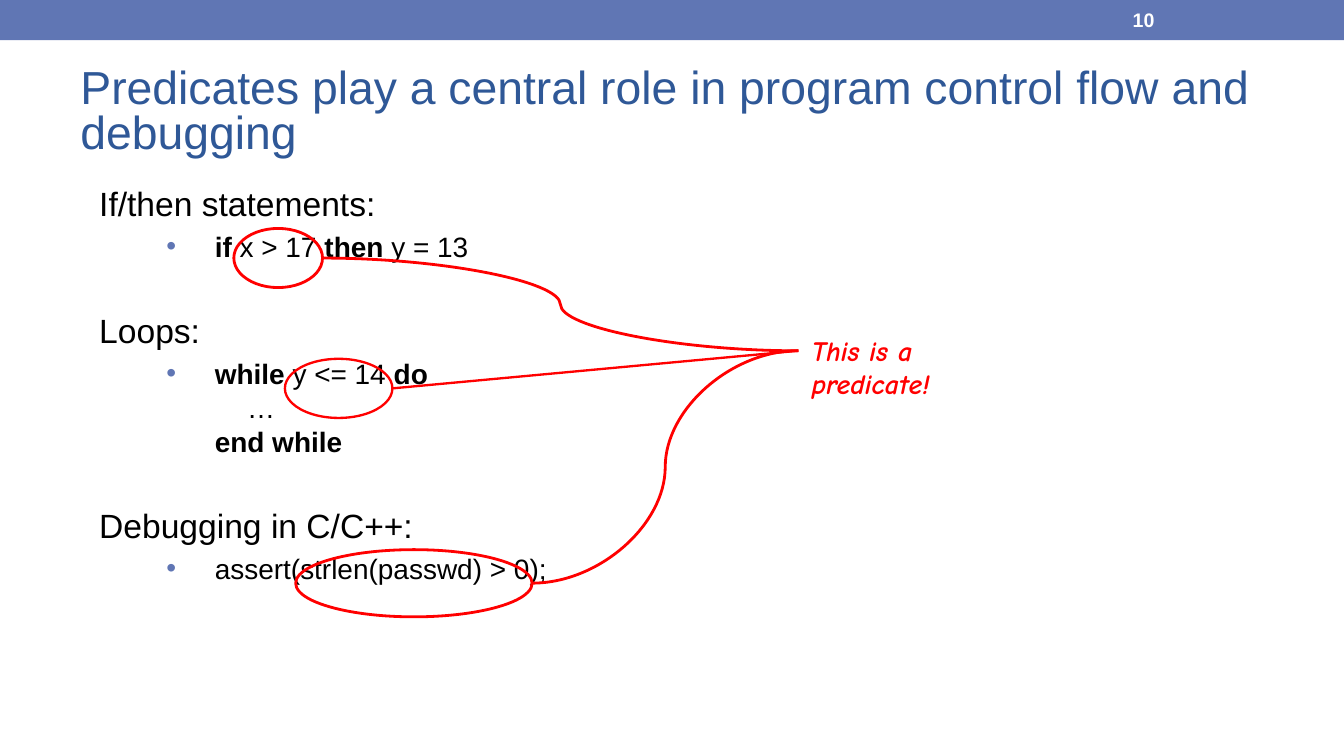
from lxml import etree
from pptx import Presentation
from pptx.dml.color import RGBColor
from pptx.enum.shapes import MSO_CONNECTOR, MSO_SHAPE
from pptx.enum.text import MSO_ANCHOR
from pptx.oxml.ns import qn
from pptx.util import Inches, Pt

RECT, OVAL = MSO_SHAPE.RECTANGLE, MSO_SHAPE.OVAL
CURVE, STRAIGHT = MSO_CONNECTOR.CURVE, MSO_CONNECTOR.STRAIGHT
TOP, MIDDLE = MSO_ANCHOR.TOP, MSO_ANCHOR.MIDDLE
BLUE = RGBColor(0x60, 0x76, 0xB4)
NAVY = RGBColor(0x2F, 0x58, 0x97)
RED = RGBColor(0xFF, 0x00, 0x00)
BLACK = RGBColor(0x00, 0x00, 0x00)
WHITE = RGBColor(0xFF, 0xFF, 0xFF)

prs = Presentation()
prs.slide_width = Inches(10)
prs.slide_height = Inches(10) * 9 // 16
s = prs.slides.add_slide(prs.slide_layouts[6])


def add_box(x, y, w, h, anchor=TOP):
    tf = s.shapes.add_textbox(Inches(x), Inches(y), Inches(w), Inches(h)).text_frame
    tf.word_wrap = True
    tf.vertical_anchor = anchor
    return tf


def add_run(p, text, size, color, bold=False, font="Arial"):
    r = p.add_run()
    r.text = text
    r.font.name = font
    r.font.size = Pt(size)
    r.font.bold = bold
    r.font.color.rgb = color
    return r


banner = s.shapes.add_shape(RECT, 0, 0, Inches(10), Inches(0.3))
banner.shadow.inherit = False
banner.fill.solid()
banner.fill.fore_color.rgb = BLUE
banner.line.fill.background()

HEADING, BULLET, CODE, NESTED = "heading", "bullet", "code", "nested"
MARGINS = {HEADING: 0.5, BULLET: 1, CODE: 1, NESTED: 1.24}
body = [
    (HEADING, 3.6, [("If/then statements:", False)]),
    (BULLET, 3.6, [("if", True), (" x > 17 ", False), ("then", True), (" y = 13", False)]),
    (HEADING, 24.8, [("Loops:", False)]),
    (BULLET, 3.6, [("while", True), (" y <= 14 ", False), ("do", True)]),
    (NESTED, 0.2, [("…", False)]),
    (CODE, 0.2, [("end while", True)]),
    (HEADING, 24.8, [("Debugging in C/C++:", False)]),
    (BULLET, 3.6, [("assert(strlen(passwd) > 0);", False)]),
]
tf = add_box(0.5, 1.31, 9, 4)
for i, (kind, before, runs) in enumerate(body):
    p = tf.add_paragraph() if i else tf.paragraphs[0]
    p.space_before = Pt(before)
    pPr = p._p.get_or_add_pPr()
    pPr.set("marL", str(Inches(MARGINS[kind])))
    pPr.set("indent", str(Inches(-0.36) if kind in (HEADING, BULLET) else 0))
    if kind == BULLET:
        color = etree.SubElement(pPr, qn("a:buClr"))
        etree.SubElement(color, qn("a:srgbClr"), val=str(BLUE))
        etree.SubElement(pPr, qn("a:buFont"), typeface="Arial")
        etree.SubElement(pPr, qn("a:buChar"), char="•")
    for text, bold in runs:
        add_run(p, text, 18 if kind == HEADING else 15, BLACK, bold)

label = add_box(5.94, 2.43, 1.83, 0.35)
r = add_run(label.paragraphs[0], "This is a predicate!", 15, RED, True, "Comic Neue")
r.font.italic = True

predicates = [
    (1.74, 1.7, 0.66, 0.44, 1.5, CURVE),
    (2.12, 2.67, 0.8, 0.44, 1.25, STRAIGHT),
    (2.2, 4.09, 1.76, 0.5, 1.5, CURVE),
]
for x, y, w, h, weight, kind in predicates:
    ring = s.shapes.add_shape(OVAL, Inches(x), Inches(y), Inches(w), Inches(h))
    ring.shadow.inherit = False
    ring.fill.background()
    link = s.shapes.add_connector(
        kind, Inches(x + w), Inches(y + h / 2), Inches(5.94), Inches(2.61)
    )
    for sp in (ring, link):
        sp.line.color.rgb = RED
        sp.line.width = Pt(weight)
    etree.SubElement(link._element.spPr, qn("a:effectLst"))

title = add_box(0.5, 0.44, 9, 0.81, MIDDLE)
p = title.paragraphs[0]
p.line_spacing = 0.8
add_run(p, "Predicates play a central role in program control flow and debugging", 24.8, NAVY)

number = add_box(8.33, 0.01, 1.17, 0.27, MIDDLE)
add_run(number.paragraphs[0], "10", 10.5, WHITE, True)

prs.save("out.pptx")
